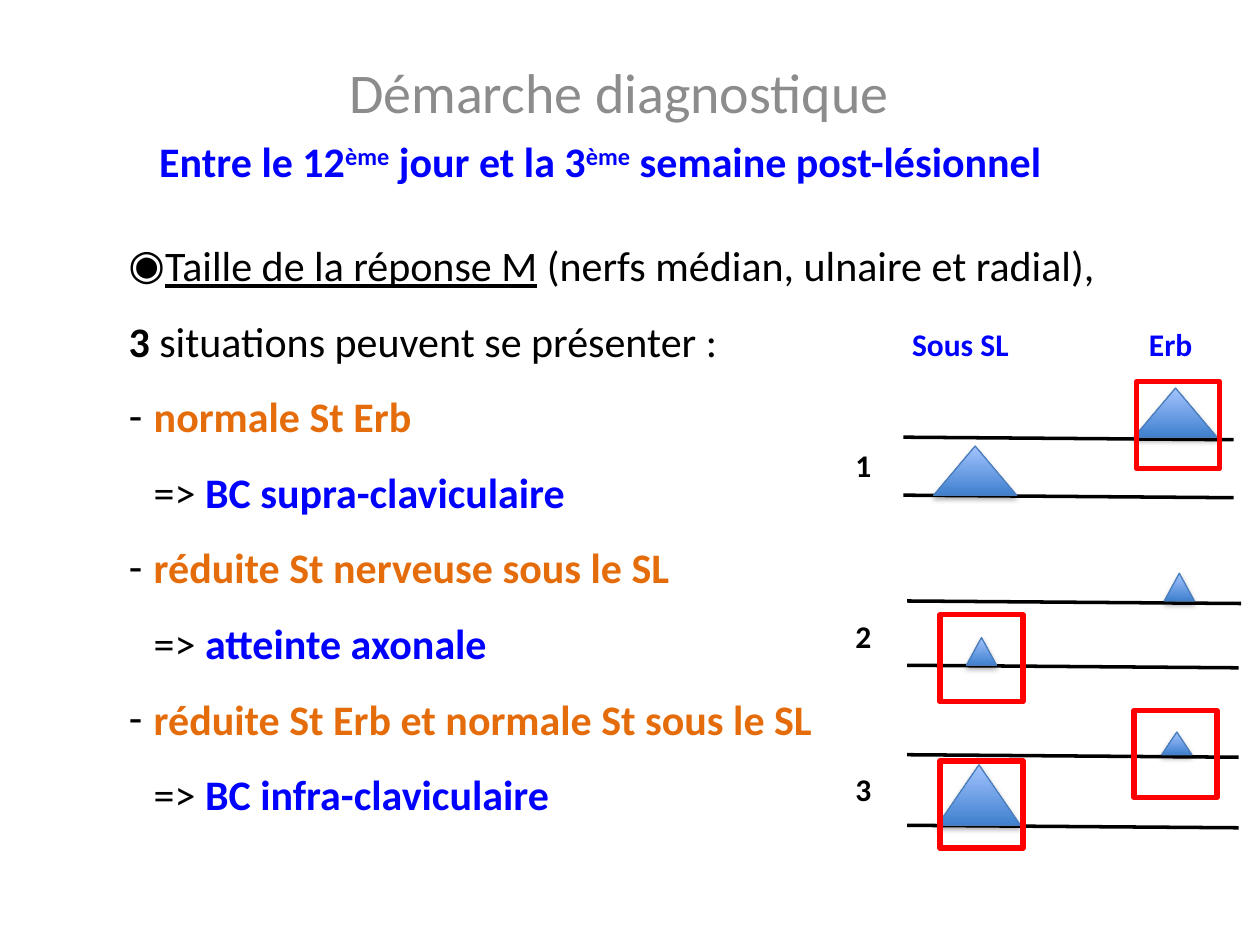
import pptx
import pptx.dml.color
import pptx.enum.shapes
import pptx.enum.text
import pptx.oxml
import pptx.oxml.ns
import pptx.util
from pptx.util import Inches

BLUE, ORANGE, BLACK, GREY, RED = "0000FF", "E46C0A", "000000", "8C8C8C", "FF0000"
SHADOW = (
    '<a:outerShdw xmlns:a="http://schemas.openxmlformats.org/drawingml/2006/main" '
    'blurRad="39370" dist="22860" dir="5400000" rotWithShape="0">'
    '<a:srgbClr val="000000"><a:alpha val="35000"/></a:srgbClr></a:outerShdw>'
)


def rgb(color):
    return pptx.dml.color.RGBColor.from_string(color)


def child(parent, tag, **attributes):
    """Append an XML element with the given attributes."""
    el = pptx.oxml.parse_xml(
        f'<{tag} xmlns:a="http://schemas.openxmlformats.org/drawingml/2006/main"/>')
    for name, value in attributes.items():
        el.set(name, str(value))
    parent.append(el)
    return el


class SlideBuilder:
    font = "Calibri"
    shapes = pptx.enum.shapes.MSO_SHAPE
    align = pptx.enum.text.PP_ALIGN

    def __init__(self, prs):
        self.s = prs.slides.add_slide(prs.slide_layouts[1])

    def place(self, sp, x, y, w, h):
        sp.left, sp.top, sp.width, sp.height = map(Inches, (x, y, w, h))
        tf = sp.text_frame
        tf.auto_size = pptx.enum.text.MSO_AUTO_SIZE.NONE
        tf.vertical_anchor = pptx.enum.text.MSO_ANCHOR.TOP
        return tf

    def style(self, p, size, color, bold=False):
        p.font.name = self.font
        p.font.size = pptx.util.Pt(size)
        p.font.bold = bold
        p.font.color.rgb = rgb(color)

    def runs(self, p, parts):
        """Add (text, font settings) pairs to a paragraph."""
        for text, look in parts:
            r = p.add_run()
            r.text = text
            if "color" in look:
                r.font.color.rgb = rgb(look["color"])
            if "bold" in look:
                r.font.bold = look["bold"]
            if "underline" in look:
                r.font.underline = look["underline"]
            if "baseline" in look:
                r._r.get_or_add_rPr().set("baseline", str(look["baseline"]))

    def title(self, text, *box):
        p = self.place(self.s.shapes.title, *box).paragraphs[0]
        p.text = text
        p.alignment = self.align.CENTER
        self.style(p, 32, GREY)

    def body(self, items, *box):
        """Fill the body with (bullet, left margin, hanging indent, runs) items."""
        tf = self.place(self.s.placeholders[1], *box)
        for i, (bullet, margin, hanging, parts) in enumerate(items):
            p = tf.paragraphs[0] if i == 0 else tf.add_paragraph()
            p.line_spacing = 1.5
            p.space_before = pptx.util.Pt(0)
            pPr = p._p.get_or_add_pPr()
            pPr.set("marL", str(Inches(margin)))
            pPr.set("indent", str(-Inches(hanging)))
            if bullet:
                child(child(pPr, "a:buClr"), "a:srgbClr", val=BLACK)
                child(pPr, "a:buChar", char=bullet)
            else:
                child(pPr, "a:buNone")
            self.style(p, 24, BLACK)
            self.runs(p, parts)

    def text(self, parts, x, y, w, h, size=18, color=BLUE, align=None, wrap=False):
        tf = self.place(self.s.shapes.add_textbox(0, 0, 0, 0), x, y, w, h)
        tf.word_wrap = wrap
        p = tf.paragraphs[0]
        p.alignment = align
        self.style(p, size, color, bold=True)
        self.runs(p, parts)

    def line(self, x1, y1, x2, y2):
        cx = self.s.shapes.add_connector(
            pptx.enum.shapes.MSO_CONNECTOR.STRAIGHT, *map(Inches, (x1, y1, x2, y2)))
        cx.line.color.rgb = rgb(BLACK)
        cx.line.width = pptx.util.Pt(2)
        child(cx._element.spPr, "a:effectLst")

    def shape(self, kind, box, color, width):
        sp = self.s.shapes.add_shape(kind, *map(Inches, box))
        sp.line.color.rgb = rgb(color)
        sp.line.width = pptx.util.Pt(width)
        sp.shadow.inherit = False
        return sp

    def wave(self, center, base, w, h):
        """Draw a muscle response as a triangle standing on its trace."""
        sp = self.shape(self.shapes.ISOSCELES_TRIANGLE,
                        (center - w / 2, base - h, w, h), "4B7EBC", 0.75)
        sp.fill.gradient()
        sp.fill.gradient_angle = 90
        for stop, position, color in zip(sp.fill.gradient_stops, (0, 1), ("3F80CE", "A4C4FF")):
            stop.position = position
            stop.color.rgb = rgb(color)
        effects = sp._element.spPr.find(pptx.oxml.ns.qn("a:effectLst"))
        effects.append(pptx.oxml.parse_xml(SHADOW))

    def frame(self, x, y):
        self.shape(self.shapes.RECTANGLE, (x, y, 0.66, 0.69), RED, 3).fill.background()


def finding(text):
    return "-", 0.59, 0.2, [(text, {"color": ORANGE, "bold": True})]


def conclusion(text):
    return None, 0.59, 0, [("=> ", {}), (text, {"color": BLUE, "bold": True})]


def main():
    prs = pptx.Presentation()
    prs.slide_width, prs.slide_height = Inches(10), Inches(7.5)
    b = SlideBuilder(prs)

    b.title("Démarche diagnostique", 0, 0.41, 9.83, 0.65)
    b.body([
        ("◉", 0.68, 0.29, [("Taille de la réponse M", {"underline": True}),
                           (" (nerfs médian, ulnaire et radial),", {})]),
        (None, 0.39, 0, [("3", {"bold": True}), (" situations peuvent se présenter :", {})]),
        finding("normale St Erb"),
        conclusion("BC supra-claviculaire"),
        finding("réduite St nerveuse sous le SL"),
        conclusion("atteinte axonale"),
        finding("réduite St Erb et normale St sous le SL"),
        conclusion("BC infra-claviculaire"),
    ], 0.53, 1.65, 9.29, 4.91)
    superscript = {"baseline": 30000}
    b.text([("Entre le 12", {}), ("ème", superscript), (" jour et la 3", {}),
            ("ème", superscript), (" semaine post-lésionnel", {})],
           0, 1.03, 9.53, 0.5, size=24, align=b.align.CENTER, wrap=True)

    # Each trace: left, right, height of the line, then centre, width, height of the wave
    traces = [
        (7.17, 9.79, 3.47, 9.33, 0.66, 0.39),
        (7.17, 9.79, 3.93, 7.74, 0.66, 0.39),
        (7.2, 9.85, 4.77, 9.36, 0.24, 0.22),
        (7.2, 9.83, 5.28, 7.79, 0.24, 0.22),
        (7.2, 9.83, 5.99, 9.34, 0.24, 0.18),
        (7.2, 9.83, 6.55, 7.77, 0.66, 0.48),
    ]
    for left, right, y, center, w, h in traces:
        b.line(left, y, right, y + 0.02)
        b.wave(center, y, w, h)
    for x, y in [(9.02, 3.03), (7.46, 4.88), (9, 5.64), (7.46, 6.04)]:
        b.frame(x, y)

    b.text([("Sous SL", {})], 7.14, 2.53, 0.98, 0.4)
    b.text([("Erb", {})], 9.02, 2.53, 0.55, 0.4)
    for number, y in enumerate((3.49, 4.85, 6.06), start=1):
        b.text([(str(number), {})], 6.69, y, 0.33, 0.4, color=BLACK)

    prs.save("out.pptx")


if __name__ == "__main__":
    main()
